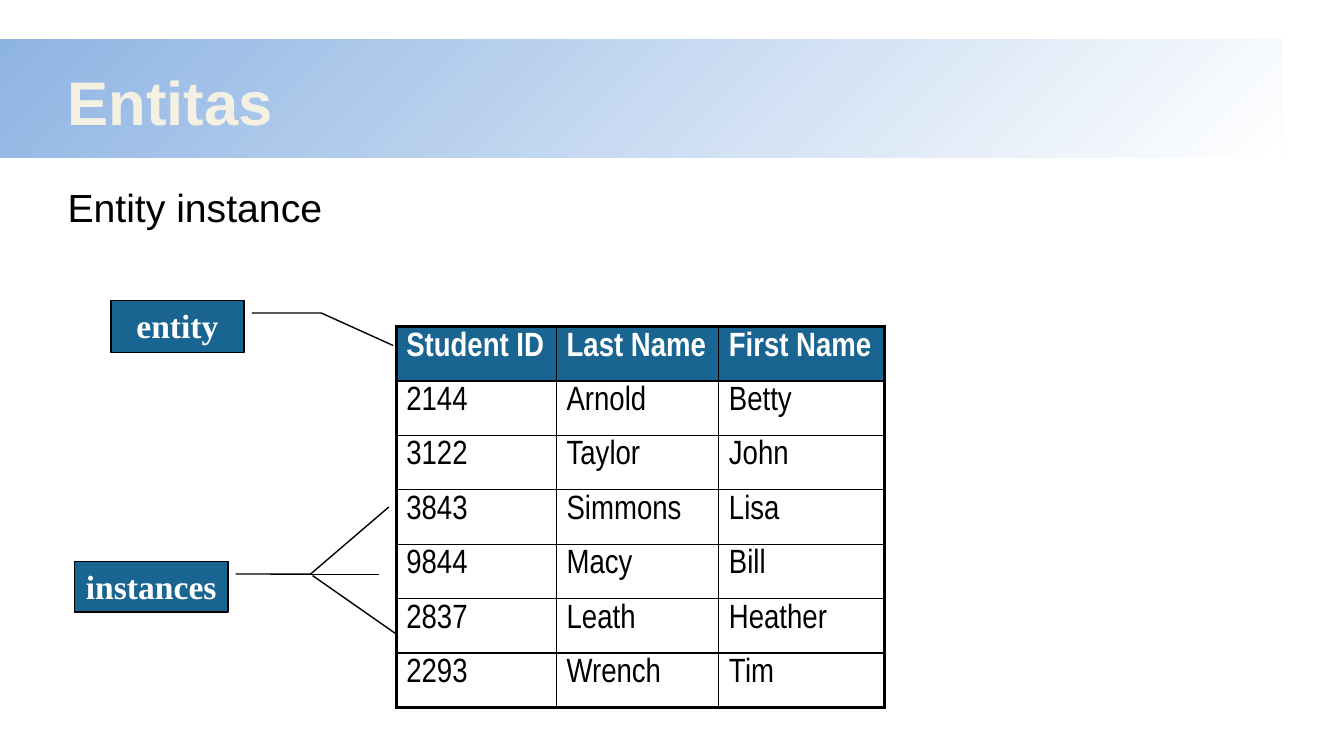
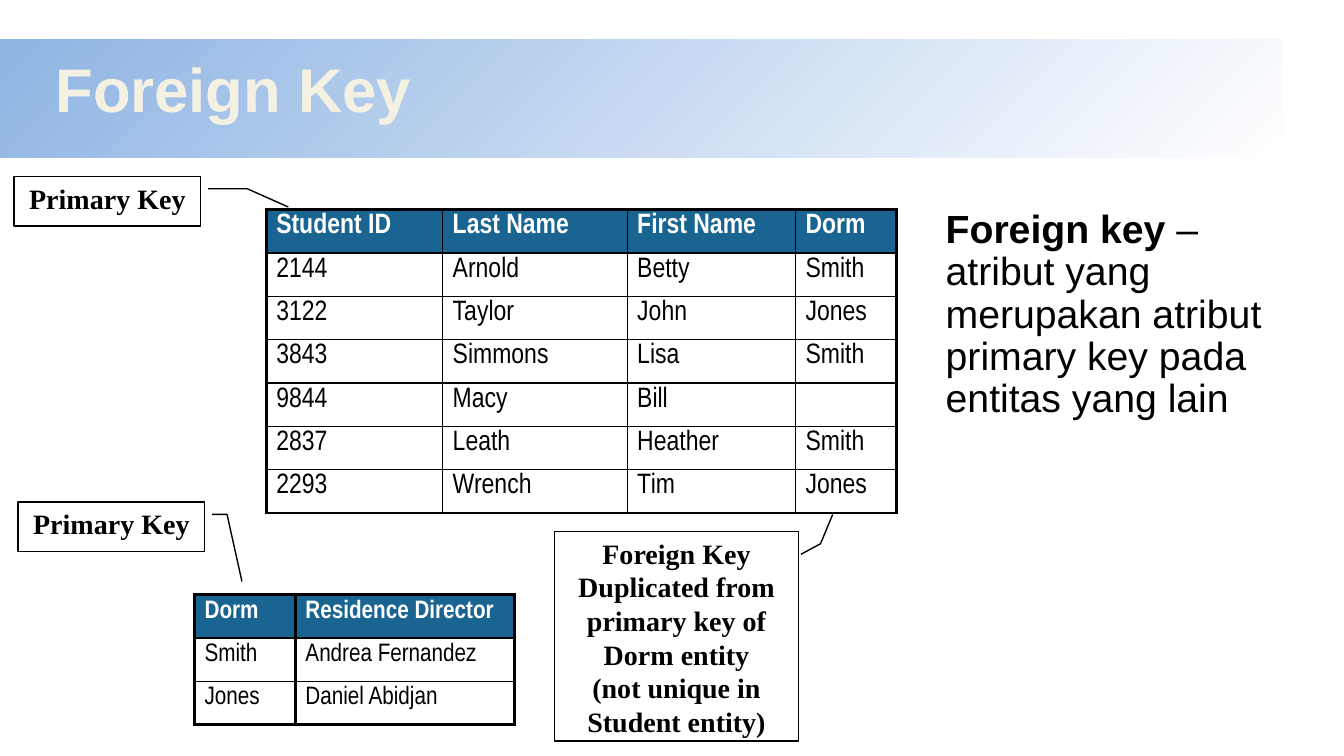
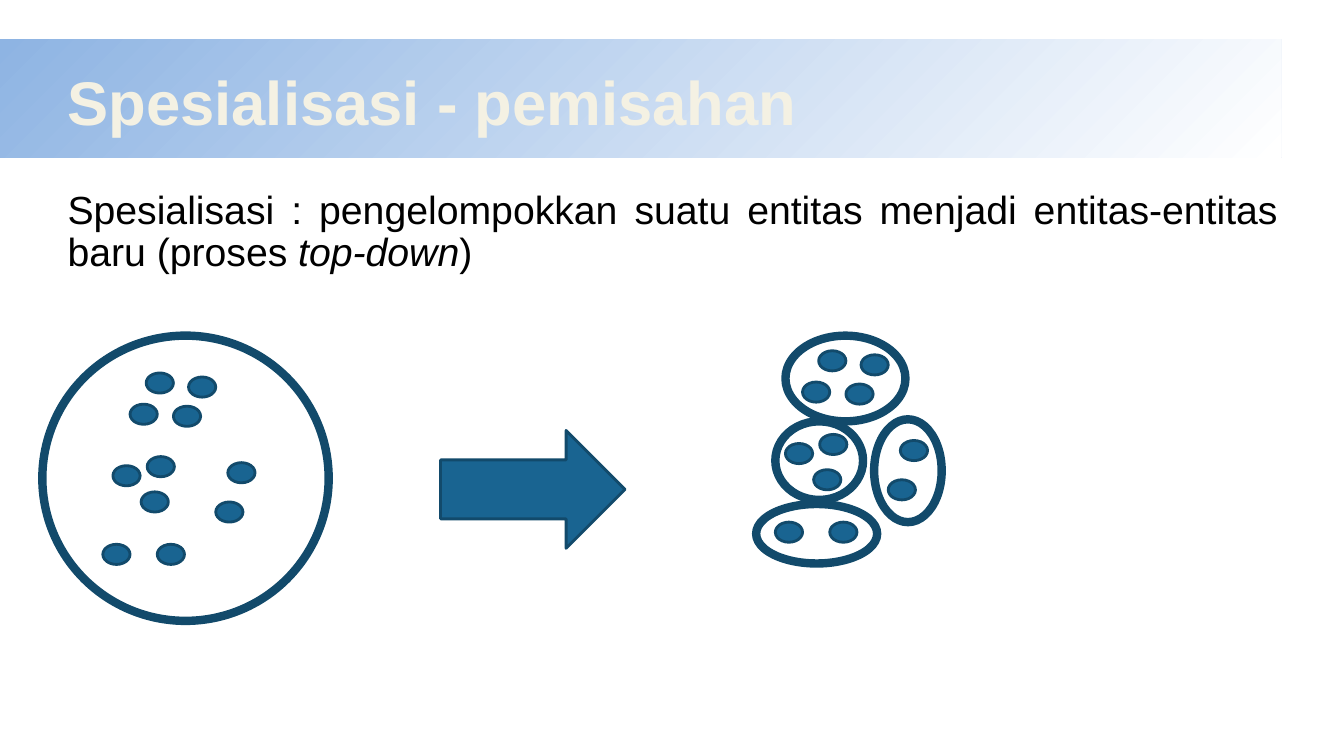
from pptx import Presentation
from pptx.enum.dml import MSO_LINE
from pptx.enum.shapes import MSO_CONNECTOR, MSO_SHAPE
from pptx.enum.text import MSO_ANCHOR, MSO_AUTO_SIZE, PP_ALIGN
from pptx.dml.color import RGBColor
from pptx.oxml import parse_xml
from pptx.oxml.ns import nsdecls, qn
from pptx.util import Inches, Pt

BLUE, NAVY, SKY = "196491", "124A6B", "8EB4E3"
CREAM, EDGE = "F4F1E3", "054697"
WHITE, BLACK = "FFFFFF", "000000"
SANS, SLIM, SERIF = "Arial", "Arial Narrow", "Times New Roman"


def paint(fill, code):
    fill.solid()
    fill.fore_color.rgb = RGBColor.from_string(code)


def style(para, size, face, code, bold=False):
    font = para.font
    font.size, font.name, font.bold = Pt(size), face, bold
    paint(font.fill, code)


deck = Presentation()
deck.slide_width, deck.slide_height = Inches(13.33), Inches(7.5)
layout = deck.slide_layouts[5]

pages = [
    ("Entitas", (0.67, 0.55, 12, 1), (0.67, 1.87, 8.83, 0.75), PP_ALIGN.LEFT,
     [("Entity instance", "")]),
    ("Foreign Key", (0.55, 0.56, 12, 0.71), (9.38, 2.08, 3.17, 4.03), PP_ALIGN.LEFT,
     [("Foreign key", "bold"),
      (" – atribut yang merupakan atribut primary key pada entitas yang lain", "")]),
    ("Spesialisasi - pemisahan", (0.67, 0.55, 12, 1), (0.67, 1.89, 12, 1.06),
     PP_ALIGN.JUSTIFY,
     [("Spesialisasi : pengelompokkan suatu entitas menjadi entitas-entitas baru (proses ", ""),
      ("top-down", "italic"), (")", "")]),
]
slides = []
for name, head, area, align, parts in pages:
    slide = deck.slides.add_slide(layout)
    slides.append(slide)
    title = slide.shapes.title
    title.left, title.top, title.width, title.height = map(Inches, head)
    title.text_frame.text = name
    body = slide.shapes.add_textbox(*map(Inches, area))
    for box, side, size, code in [(title, PP_ALIGN.LEFT, 44, CREAM), (body, align, 28, BLACK)]:
        frame = box.text_frame
        frame.word_wrap, frame.auto_size = True, MSO_AUTO_SIZE.NONE
        frame.margin_left = frame.margin_right = 0
        frame.margin_top = frame.margin_bottom = 0
        para = frame.paragraphs[0]
        para.alignment, para.line_spacing = side, 0.9
        style(para, size, SANS, code, box is title)
    title.text_frame.vertical_anchor = MSO_ANCHOR.MIDDLE
    for rule in title.element.iter(qn("a:defRPr")):
        rule.insert(0, parse_xml(
            f'<a:ln {nsdecls("a")} w="12700"><a:solidFill><a:srgbClr val="{EDGE}"/>'
            '</a:solidFill></a:ln>'))
    for text, look in parts:
        run = para.add_run()
        run.text = text
        if look:
            setattr(run.font, look, True)

first, second, third = slides

band = first.shapes.add_shape(
    MSO_SHAPE.RECTANGLE, 0, Inches(0.39), Inches(12.71), Inches(1.17))
band.shadow.inherit = False
band.line.fill.background()
band.fill.gradient()
band.fill.gradient_angle = 315
for stop, code in zip(band.fill.gradient_stops, (SKY, WHITE)):
    stop.color.rgb = RGBColor.from_string(code)
layout.shapes.element.insert(2, band.element)

pupils = [
    ("Student ID", "Last Name", "First Name", "Dorm"),
    ("2144", "Arnold", "Betty", "Smith"),
    ("3122", "Taylor", "John", "Jones"),
    ("3843", "Simmons", "Lisa", "Smith"),
    ("9844", "Macy", "Bill", ""),
    ("2837", "Leath", "Heather", "Smith"),
    ("2293", "Wrench", "Tim", "Jones"),
]
dorms = [
    ("Dorm", "Residence Director"),
    ("Smith", "Andrea Fernandez"),
    ("Jones", "Daniel Abidjan"),
]
THICK, THIN = 2.25, 1
grids = [
    (first, 3.93, 3.24, [1.59, 1.61, 1.64], 0.54, pupils, 24, 1, THIN),
    (second, 2.64, 2.08, [1.75, 1.83, 1.67, 1], 0.43, pupils, 20, 0.9, THIN),
    (second, 1.93, 5.9, [1, 2.17], 0.43, dorms, 18, 1, THICK),
]
for slide, left, top, widths, high, data, size, space, inner in grids:
    rows, cols = len(data), len(widths)
    table = slide.shapes.add_table(
        rows, cols, Inches(left), Inches(top),
        Inches(sum(widths)), Inches(high * rows)).table
    table.horz_banding = False
    for col, wide in zip(table.columns, widths):
        col.width = Inches(wide)
    for i, row in enumerate(data):
        for j, text in enumerate(row[:cols]):
            cell = table.cell(i, j)
            cell.text = text
            para = cell.text_frame.paragraphs[0]
            para.line_spacing = space
            style(para, size, SLIM, BLACK if i else WHITE, i == 0)
            lines = [
                ("lnL", THICK if j == 0 else inner),
                ("lnR", THICK if j == cols - 1 else inner),
                ("lnT", THICK if i == 0 else THIN),
                ("lnB", THICK if i == rows - 1 else THIN),
            ]
            props = cell._tc.get_or_add_tcPr()
            for tag, weight in lines:
                props.append(parse_xml(
                    f'<a:{tag} {nsdecls("a")} w="{Pt(weight)}"><a:solidFill>'
                    f'<a:srgbClr val="{BLACK}"/></a:solidFill></a:{tag}>'))
            paint(cell.fill, WHITE if i else BLUE)

notes = [
    (first, (0.74, 5.57, 1.52, 0.5), (0.249, 1.055, 0.249, 1.544, -1.08, 2.054),
     BLUE, WHITE, 24, ["instances"]),
    (first, (1.1, 2.98, 1.32, 0.52), (0.242, 1.063, 0.242, 1.585, 0.862, 2.125),
     BLUE, WHITE, 24, ["entity"]),
    (second, (0.14, 1.75, 1.85, 0.49), (0.253, 1.045, 0.253, 1.253, 0.618, 1.469),
     WHITE, BLACK, 20, ["Primary Key"]),
    (second, (0.18, 4.98, 1.85, 0.49), (0.253, 1.045, 0.253, 1.119, 1.614, 1.197),
     WHITE, BLACK, 20, ["Primary Key"]),
    (second, (5.5, 5.27, 2.42, 2.08), (0.113, 1.01, 0.06, 1.093, -0.081, 1.143),
     WHITE, BLACK, 20,
     ["Foreign Key", "Duplicated from primary key of Dorm entity",
      "(not unique in Student entity)"]),
]
for slide, area, bends, back, ink, size, texts in notes:
    note = slide.shapes.add_shape(MSO_SHAPE.LINE_CALLOUT_2, *map(Inches, area))
    note.shadow.inherit = False
    for i, bend in enumerate(bends):
        note.adjustments[i] = round(bend, 2)
    paint(note.fill, back)
    paint(note.line.fill, BLACK)
    note.line.width = Pt(1)
    frame = note.text_frame
    frame.word_wrap, frame.vertical_anchor = True, MSO_ANCHOR.TOP
    frame.text = "\n".join(texts)
    for para in frame.paragraphs:
        para.alignment = PP_ALIGN.CENTER
        style(para, size, SERIF, ink, True)

for ends in [(2.68, 5.7, 3.76, 5.7), (3.1, 5.71, 3.93, 6.29)]:
    link = first.shapes.add_connector(MSO_CONNECTOR.STRAIGHT, *map(Inches, ends))
    paint(link.line.fill, BLACK)
    link.line.width = Pt(1)
    link.element.spPr.append(parse_xml(f'<a:effectLst {nsdecls("a")}/>'))

dots = [
    (1.45, 3.7), (1.29, 4.01), (1.46, 4.53), (1.72, 4.03), (1.87, 3.74), (2.26, 4.59),
    (1.12, 4.62), (1.4, 4.88), (2.14, 4.98), (1.02, 5.4), (1.56, 5.4),
]
rings = [
    (0.42, 3.33, 2.84, 2.83), (7.79, 3.33, 1.19, 0.85), (8.67, 4.16, 0.67, 1.02),
    (7.5, 5, 1.2, 0.59), (7.69, 4.18, 0.87, 0.78),
]
forms = [(MSO_SHAPE.OVAL, (x + dx, y + dy, 0.27, 0.2), 2)
         for dx, dy in [(0, 0), (6.67, -0.22)] for x, y in dots]
forms += [(MSO_SHAPE.OVAL, ring, 6) for ring in rings]
forms.append((MSO_SHAPE.RIGHT_ARROW, (4.37, 4.27, 1.83, 1.17), 2))
for kind, area, weight in forms:
    form = third.shapes.add_shape(kind, *map(Inches, area))
    form.shadow.inherit = False
    paint(form.line.fill, NAVY)
    form.line.width = Pt(weight)
    if weight == 6:
        form.fill.background()
    else:
        paint(form.fill, BLUE)

deck.save("out.pptx")
